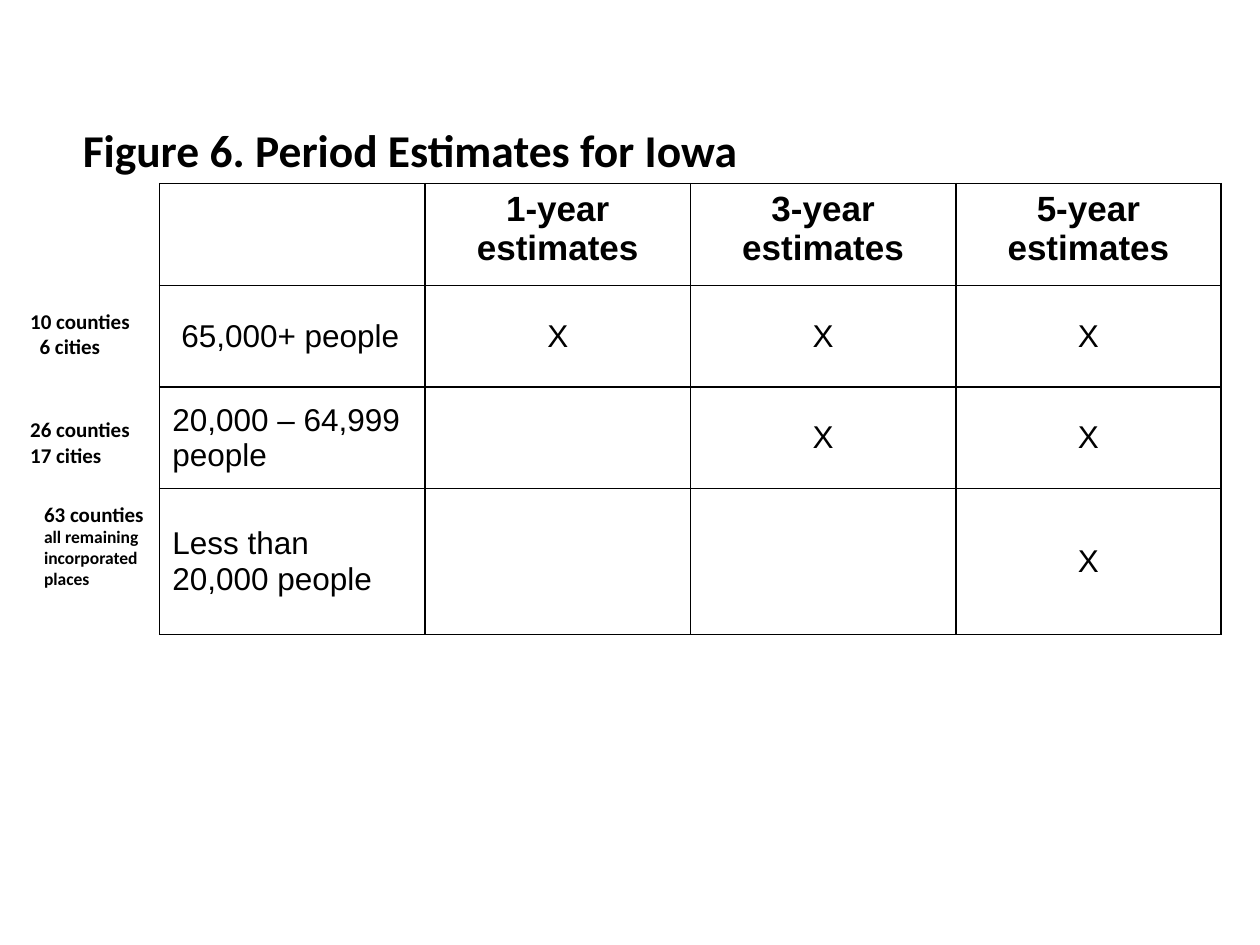
"""Build the slide of period estimates for Iowa."""
from dataclasses import dataclass

from pptx import Presentation
from pptx import util as u
from pptx.dml import color
from pptx.enum import text
from pptx.oxml import parse_xml
from pptx.oxml.ns import nsdecls

BLACK, WHITE = "000000", "FFFFFF"
COL_WIDTH = 5.35
ROW_HEIGHTS = [2.06, 2.04, 2.05, 2.94]
ROWS = [
    ["", "1-year estimates", "3-year estimates", "5-year estimates"],
    ["65,000+ people", "X", "X", "X"],
    ["20,000 – 64,999 people", "", "X", "X"],
    ["Less than 20,000 people", "", "", "X"],
]


@dataclass
class Line:
    text: str
    size: float = 12
    indent: float = 0
    after: float = 0


@dataclass
class Label:
    left: float
    top: float
    width: float
    height: float
    lines: list[Line]


LABELS = [
    Label(1.42, 2.34, 22.96, 1.37,
          [Line("Figure 6. Period Estimates for Iowa", 26, after=6)]),
    Label(0.36, 6.1, 2.62, 1.27, [Line("10 counties"), Line("6 cities", indent=0.19)]),
    Label(0.36, 8.28, 2.62, 1.27, [Line("26 counties"), Line("17 cities")]),
    Label(0.64, 9.98, 2.62, 2.06,
          [Line("63 counties"), Line("all remaining incorporated places", 10)]),
]


def rgb(value: str) -> color.RGBColor:
    return color.RGBColor.from_string(value)


def style(p, name: str, size: float, bold: bool, indent: float = 0) -> None:
    if indent:
        p._p.get_or_add_pPr().set("marL", str(u.Cm(indent)))
    p.font.name, p.font.size, p.font.bold = name, u.Pt(size), bold
    p.font.color.rgb = rgb(BLACK)


def add_label(s, label: Label) -> None:
    sp = s.shapes.add_textbox(u.Cm(label.left), u.Cm(label.top),
                              u.Cm(label.width), u.Cm(label.height))
    tf = sp.text_frame
    tf.word_wrap = True
    for i, line in enumerate(label.lines):
        p = tf.add_paragraph() if i else tf.paragraphs[0]
        p.text = line.text
        p.space_after = u.Pt(line.after)
        style(p, "Calibri", line.size, True, line.indent)


def set_borders(cell) -> None:
    tcPr = cell._tc.get_or_add_tcPr()
    for i, side in enumerate(("lnL", "lnR", "lnT", "lnB")):
        tcPr.insert(i, parse_xml(
            f'<a:{side} {nsdecls("a")} w="{u.Pt(1)}"><a:solidFill>'
            f'<a:srgbClr val="{BLACK}"/></a:solidFill></a:{side}>'))


def add_estimates(s, left: float, top: float) -> None:
    columns = len(ROWS[0])
    table = s.shapes.add_table(len(ROWS), columns, u.Cm(left), u.Cm(top),
                               u.Cm(COL_WIDTH * columns), u.Cm(sum(ROW_HEIGHTS))).table
    table.first_row = table.horz_banding = False
    for column in table.columns:
        column.width = u.Cm(COL_WIDTH)
    for r, (values, height) in enumerate(zip(ROWS, ROW_HEIGHTS)):
        table.rows[r].height = u.Cm(height)
        for c, value in enumerate(values):
            cell = table.cell(r, c)
            cell.fill.solid()
            cell.fill.fore_color.rgb = rgb(WHITE)
            set_borders(cell)
            if not value:
                continue
            cell.text = value
            if r:
                cell.vertical_anchor = text.MSO_ANCHOR.MIDDLE
            p = cell.text_frame.paragraphs[0]
            p.alignment = text.PP_ALIGN.CENTER if c else text.PP_ALIGN.LEFT
            style(p, "Arial", 18 if r else 20, r == 0, 0.18 if (r, c) == (1, 0) else 0)


def main() -> None:
    prs = Presentation()
    prs.slide_width, prs.slide_height = u.Cm(25.4), u.Cm(19.05)
    s = prs.slides.add_slide(prs.slide_layouts[6])
    add_estimates(s, 3.22, 3.7)
    for label in LABELS:
        add_label(s, label)
    prs.save("out.pptx")


if __name__ == "__main__":
    main()
